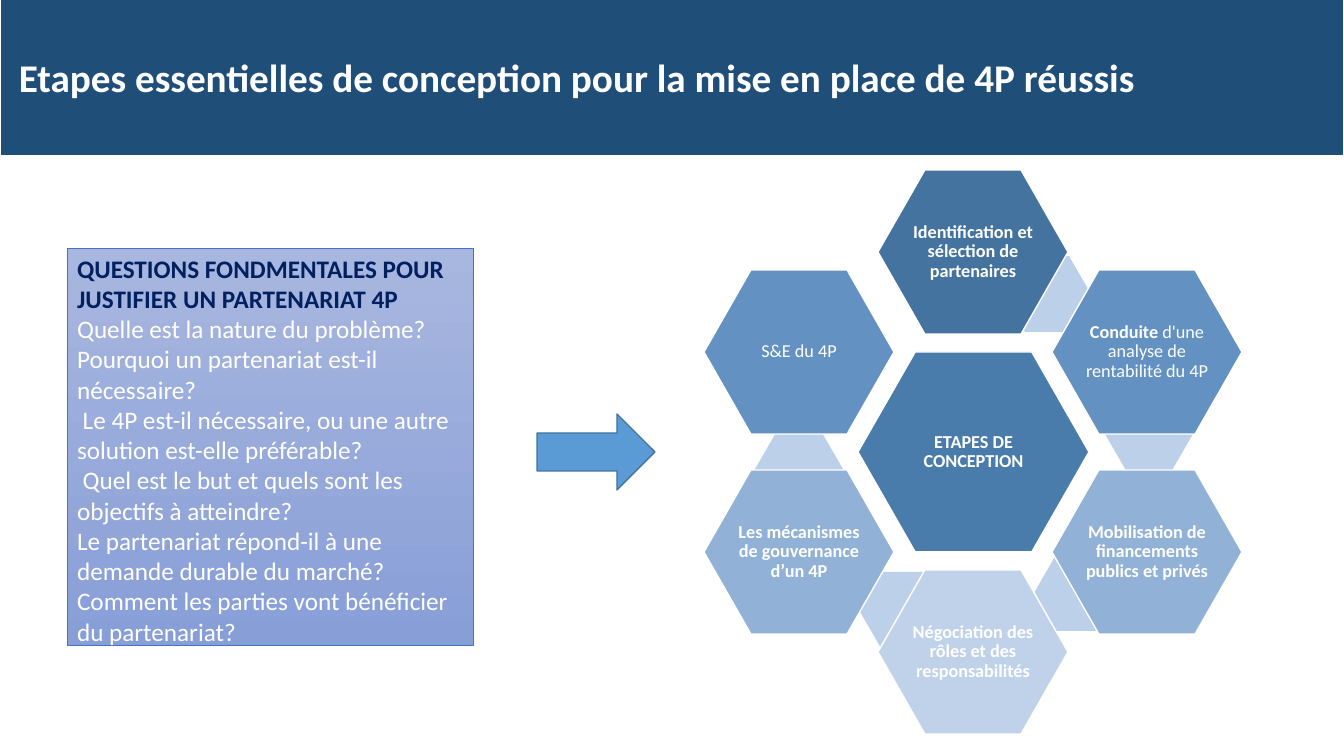
from pptx import Presentation
from pptx.dml.color import RGBColor
from pptx.enum.shapes import MSO_SHAPE
from pptx.enum.text import MSO_ANCHOR, MSO_AUTO_SIZE, PP_ALIGN
from pptx.oxml.xmlchemy import OxmlElement
from pptx.util import Emu, Pt

COLORS = {
    "white": "FFFFFF", "navy": "1F4E79", "heading": "002060",
    "box_top": "A8B7DF", "box_bottom": "889ED7", "box_line": "4472C4",
    "arrow": "5B9BD5", "arrow_line": "43739E", "link": "BDD0E9",
    "center": "497CAB", "step1": "43739E", "step2": "6391C1",
    "step3": "91B1D6", "step4": "C0D2EA",
}
FONT = "Calibri"
EMU_PER_PX = 914400 / 100.8

QUESTIONS = [
    "Quelle est la nature du problème? Pourquoi un partenariat est-il nécessaire?",
    " Le 4P est-il nécessaire, ou une autre solution est-elle préférable?",
    " Quel est le but et quels sont les objectifs à atteindre?",
    "Le partenariat répond-il à une demande durable du marché? "
    "Comment les parties vont bénéficier du partenariat?",
]

CX, CY = 973, 452
DX, DY = 174, 100
STEPS = [
    (0, -2, "step1", [("Identification et sélection de partenaires", True)], (1003, 256)),
    (1, -1, "step2", [("Conduite", True), (" d'une analyse de rentabilité du 4P", False)], (1105, 396)),
    (1, 1, "step3", [("Mobilisation de financements publics et privés", True)], (1034, 555)),
    (0, 2, "step4", [("Négociation des rôles et des responsabilités", True)], (859, 572)),
    (-1, 1, "step3", [("Les mécanismes de gouvernance d’un 4P", True)], (755, 431)),
    (-1, -1, "step2", [("S&E du 4P", False)], None),
]


def px(n):
    return Emu(round(n * EMU_PER_PX))


def rgb(name):
    return RGBColor.from_string(COLORS[name])


class Deck:
    def __init__(self, prs):
        self.s = prs.slides.add_slide(prs.slide_layouts[1])

    def place(self, sp, x, y, w, h):
        sp.left, sp.top, sp.width, sp.height = px(x), px(y), px(w), px(h)

    def paint(self, sp, fill, line=None, width=1):
        sp.fill.solid()
        sp.fill.fore_color.rgb = rgb(fill)
        self.outline(sp, line, width)

    def outline(self, sp, line, width):
        if line:
            sp.line.color.rgb = rgb(line)
            sp.line.width = Pt(width)
        else:
            sp.line.fill.background()

    def run(self, p, text, size, color="white", bold=False):
        r = p.add_run()
        r.text = text
        r.font.name = FONT
        r.font.size = Pt(size)
        r.font.bold = bold
        r.font.color.rgb = rgb(color)

    def title(self, text, x, y, w, h):
        sp = self.s.shapes.title
        self.place(sp, x, y, w, h)
        self.paint(sp, "navy", "white", 1.5)
        tf = sp.text_frame
        tf.vertical_anchor = MSO_ANCHOR.MIDDLE
        p = tf.paragraphs[0]
        p.alignment = PP_ALIGN.LEFT
        self.run(p, text, 28, bold=True)

    def questions(self, heading, lines, x, y, w, h):
        sp = self.s.placeholders[1]
        self.place(sp, x, y, w, h)
        sp.fill.gradient()
        sp.fill.gradient_angle = 270
        for stop, color in zip(sp.fill.gradient_stops, ("box_top", "box_bottom")):
            stop.color.rgb = rgb(color)
        self.outline(sp, "box_line", 0.5)
        tf = sp.text_frame
        tf.auto_size = MSO_AUTO_SIZE.SHAPE_TO_FIT_TEXT
        for i, text in enumerate([heading] + lines):
            p = tf.add_paragraph() if i else tf.paragraphs[0]
            p.space_before = Pt(0)
            p.line_spacing = 1.0
            pPr = p._p.get_or_add_pPr()
            pPr.set("marL", "0")
            pPr.set("indent", "0")
            pPr.append(OxmlElement("a:buNone"))
            self.run(p, text, 18, "white" if i else "heading", bold=not i)

    def shape(self, kind, x, y, w, h, fill, line=None):
        sp = self.s.shapes.add_shape(kind, px(x), px(y), px(w), px(h))
        sp.shadow.inherit = False
        self.paint(sp, fill, line)
        return sp

    def hexagon(self, cx, cy, w, h, fill, runs):
        sp = self.shape(MSO_SHAPE.HEXAGON, cx - w // 2, cy - h // 2, w, h, fill, "white")
        sp.adjustments[0] = 0.286
        tf = sp.text_frame
        tf.word_wrap = True
        tf.vertical_anchor = MSO_ANCHOR.MIDDLE
        tf.margin_left = tf.margin_right = tf.margin_top = tf.margin_bottom = px(2)
        p = tf.paragraphs[0]
        p.alignment = PP_ALIGN.CENTER
        p.line_spacing = 0.9
        for text, bold in runs:
            self.run(p, text, 13, bold=bold)

    def link(self, x, y):
        sp = self.shape(MSO_SHAPE.HEXAGON, x, y, 88, 76, "link")
        sp.adjustments[0] = 0.289


def main():
    prs = Presentation()
    prs.slide_width, prs.slide_height = px(1344), px(756)
    deck = Deck(prs)
    deck.title(" Etapes essentielles de conception pour la mise en place de 4P réussis",
               0, -3, 1344, 159)
    deck.questions("QUESTIONS FONDMENTALES POUR JUSTIFIER UN PARTENARIAT 4P",
                   QUESTIONS, 67, 248, 406, 407)
    deck.hexagon(CX, CY, 231, 200, "center", [("ETAPES DE CONCEPTION", True)])
    for col, row, fill, runs, link in STEPS:
        if link:
            deck.link(*link)
        deck.hexagon(CX + col * DX, CY + row * DY, 190, 164, fill, runs)
    deck.shape(MSO_SHAPE.RIGHT_ARROW, 537, 414, 118, 76, "arrow", "arrow_line")
    prs.save("out.pptx")


if __name__ == "__main__":
    main()
